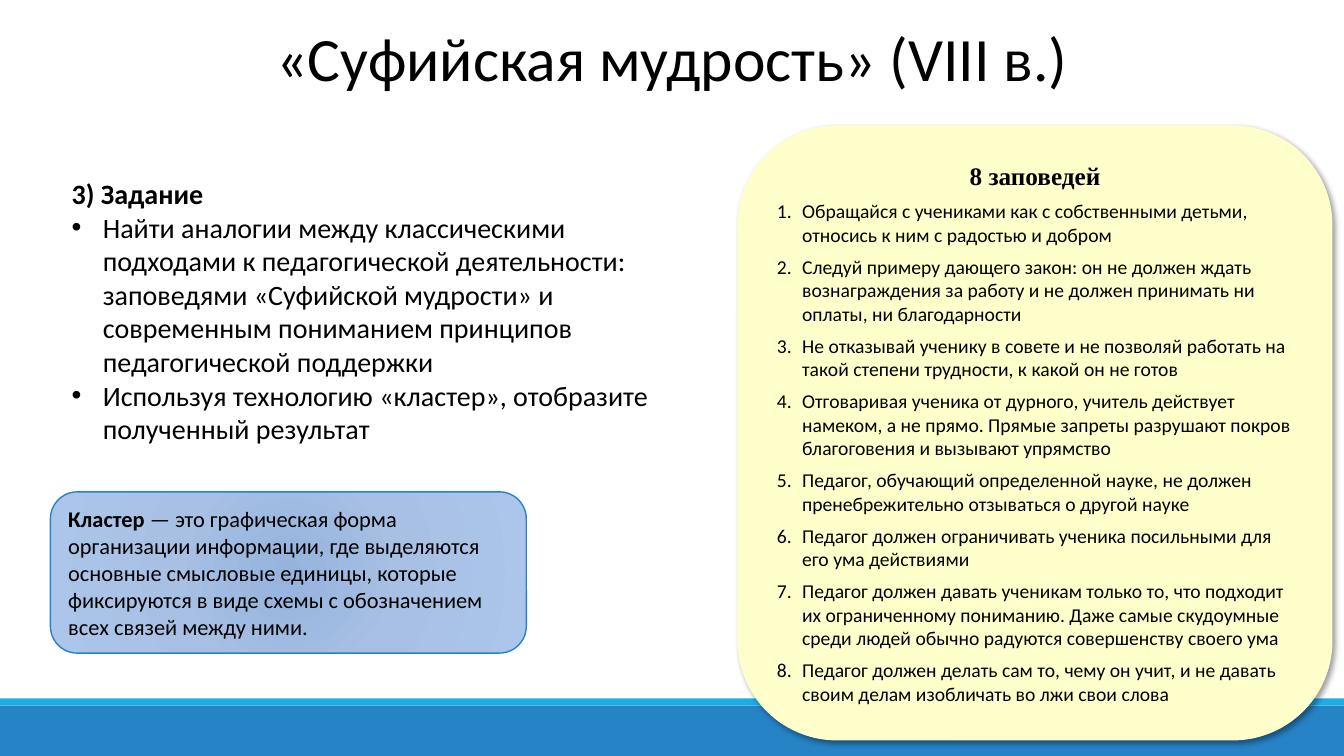
from lxml import etree
from pptx import Presentation
from pptx import util as u
from pptx.dml.color import RGBColor
from pptx.enum import shapes, text
from pptx.oxml import ns

TITLE = "«Суфийская мудрость» (VIII в.)"
TASK_HEADING = "3) Задание"
TASKS = [
    "Найти аналогии между классическими подходами к педагогической деятельности: "
    "заповедями «Суфийской мудрости» и современным пониманием принципов педагогической поддержки",
    "Используя технологию «кластер», отобразите полученный результат",
]
TERM = "Кластер"
DEFINITION = (
    " — это графическая форма организации информации, где выделяются основные смысловые "
    "единицы, которые фиксируются в виде схемы с обозначением всех связей между ними."
)
RULES_HEADING = "8 заповедей"
RULES = [
    "Обращайся с учениками как с собственными детьми, относись к ним с радостью и добром",
    "Следуй примеру дающего закон: он не должен ждать вознаграждения за работу "
    "и не должен принимать ни оплаты, ни благодарности",
    "Не отказывай ученику в совете и не позволяй работать на такой степени трудности, "
    "к какой он не готов",
    "Отговаривая ученика от дурного, учитель действует намеком, а не прямо. "
    "Прямые запреты разрушают покров благоговения и вызывают упрямство",
    "Педагог, обучающий определенной науке, не должен пренебрежительно отзываться о другой науке",
    "Педагог должен ограничивать ученика посильными для его ума действиями",
    "Педагог должен давать ученикам только то, что подходит их ограниченному пониманию. "
    "Даже самые скудоумные среди людей обычно радуются совершенству своего ума",
    "Педагог должен делать сам то, чему он учит, и не давать своим делам "
    "изобличать во лжи свои слова",
]
BLACK = RGBColor(0x00, 0x00, 0x00)
BLUE = RGBColor(0x26, 0x83, 0xC6)
CYAN = RGBColor(0x1C, 0xAD, 0xE4)
CREAM = RGBColor(0xFF, 0xFF, 0xCC)
GLOW_STOPS = [
    (0, RGBColor(0x95, 0xB3, 0xDD)),
    (45, RGBColor(0xA7, 0xC0, 0xE3)),
    (100, RGBColor(0xAC, 0xC6, 0xEB)),
]


def add_node(parent, tag, **attributes):
    """Append a DrawingML element to parent."""
    node = etree.SubElement(parent, ns.qn(tag))
    for name, value in attributes.items():
        node.set(name, str(value))
    return node


def place(shape, left, top, width, height):
    """Move and size a shape in inches."""
    shape.left, shape.top = u.Inches(left), u.Inches(top)
    shape.width, shape.height = u.Inches(width), u.Inches(height)


def add_panel(slide, kind, box, fill, line=None, weight=1):
    """Add a preset shape without shadow."""
    shape = slide.shapes.add_shape(kind, *map(u.Inches, box))
    shape.shadow.inherit = False
    shape.fill.solid()
    shape.fill.fore_color.rgb = fill
    if line is None:
        shape.line.fill.background()
    else:
        shape.line.color.rgb = line
        shape.line.width = u.Pt(weight)
    return shape


def format_frame(frame, anchor):
    """Set wrapping and vertical anchoring."""
    frame.word_wrap = True
    frame.auto_size = text.MSO_AUTO_SIZE.NONE
    frame.vertical_anchor = anchor


def format_paragraph(paragraph, size, bold=False, font="Calibri",
                     align=text.PP_ALIGN.LEFT, before=0, spacing=1.0):
    """Format a paragraph and all its runs."""
    paragraph.alignment = align
    paragraph.space_before = u.Pt(before)
    paragraph.line_spacing = spacing
    for run in paragraph.runs:
        run.font.size, run.font.bold, run.font.name = u.Pt(size), bold, font
        run.font.color.rgb = BLACK


def set_bullet(paragraph, tag, indent=0, **attributes):
    """Give a paragraph a hanging indent and a marker."""
    properties = paragraph._p.get_or_add_pPr()
    properties.set("marL", str(u.Inches(indent)))
    properties.set("indent", str(-u.Inches(indent)))
    if tag == "a:buChar":
        add_node(properties, "a:buFont", typeface="Arial")
    add_node(properties, tag, **attributes)


def add_glow(shape):
    """Replace the solid fill with a circular gradient."""
    solid = shape._element.spPr.find(ns.qn("a:solidFill"))
    gradient = etree.Element(ns.qn("a:gradFill"), rotWithShape="1")
    stops = add_node(gradient, "a:gsLst")
    for position, color in GLOW_STOPS:
        stop = add_node(stops, "a:gs", pos=position * 1000)
        add_node(stop, "a:srgbClr", val=color)
    circle = add_node(gradient, "a:path", path="circle")
    add_node(circle, "a:fillToRect", l=100000, t=100000, r=100000, b=100000)
    solid.getparent().replace(solid, gradient)


def add_shadow(shape):
    """Add a soft shadow to the lower right."""
    effects = shape._element.spPr.find(ns.qn("a:effectLst"))
    shadow = add_node(effects, "a:outerShdw", blurRad=u.Pt(4), dist=u.Pt(3),
                      dir=45 * 60000, algn="tl", rotWithShape=0)
    add_node(add_node(shadow, "a:srgbClr", val="000000"), "a:alpha", val=40000)


def main():
    """Build the slide and save it."""
    presentation = Presentation()
    presentation.slide_width, presentation.slide_height = u.Inches(13.33), u.Inches(7.5)
    slide = presentation.slides.add_slide(presentation.slide_layouts[1])
    rectangle = shapes.MSO_SHAPE.RECTANGLE
    rounded = shapes.MSO_SHAPE.ROUNDED_RECTANGLE
    middle = text.MSO_ANCHOR.MIDDLE
    center = text.PP_ALIGN.CENTER

    add_panel(slide, rectangle, (0, 7, 13.33, 0.5), BLUE)
    add_panel(slide, rectangle, (0, 6.93, 13.33, 0.07), CYAN)

    title = slide.shapes.title
    place(title, 0.92, 0.23, 11.5, 0.77)
    title.text_frame.text = TITLE
    format_frame(title.text_frame, middle)
    format_paragraph(title.text_frame.paragraphs[0], 44, align=center, spacing=0.9)

    body = slide.placeholders[1]
    place(body, 0.61, 1.7, 5.92, 2.79)
    body.text_frame.text = "\n".join([TASK_HEADING] + TASKS)
    format_frame(body.text_frame, text.MSO_ANCHOR.TOP)
    heading, *tasks = body.text_frame.paragraphs
    format_paragraph(heading, 20, bold=True)
    set_bullet(heading, "a:buNone")
    for paragraph in tasks:
        format_paragraph(paragraph, 20)
        set_bullet(paragraph, "a:buChar", 0.31, char="•")

    cluster = add_panel(slide, rounded, (0.5, 4.88, 4.72, 1.6), GLOW_STOPS[0][1], BLUE)
    add_glow(cluster)
    format_frame(cluster.text_frame, middle)
    paragraph = cluster.text_frame.paragraphs[0]
    paragraph.text = TERM
    paragraph.add_run().text = DEFINITION
    format_paragraph(paragraph, 16)
    paragraph.runs[0].font.bold = True

    rules_panel = add_panel(slide, rounded, (7.32, 1.25, 5.89, 6.09), CREAM, CREAM, 0.75)
    add_shadow(rules_panel)
    rules_panel.text_frame.text = "\n".join([RULES_HEADING] + RULES)
    format_frame(rules_panel.text_frame, middle)
    heading, *rules = rules_panel.text_frame.paragraphs
    format_paragraph(heading, 18, bold=True, font="Times New Roman", align=center)
    for paragraph in rules:
        format_paragraph(paragraph, 14, before=6)
        set_bullet(paragraph, "a:buAutoNum", 0.25, type="arabicPeriod")

    presentation.save("out.pptx")


if __name__ == "__main__":
    main()
